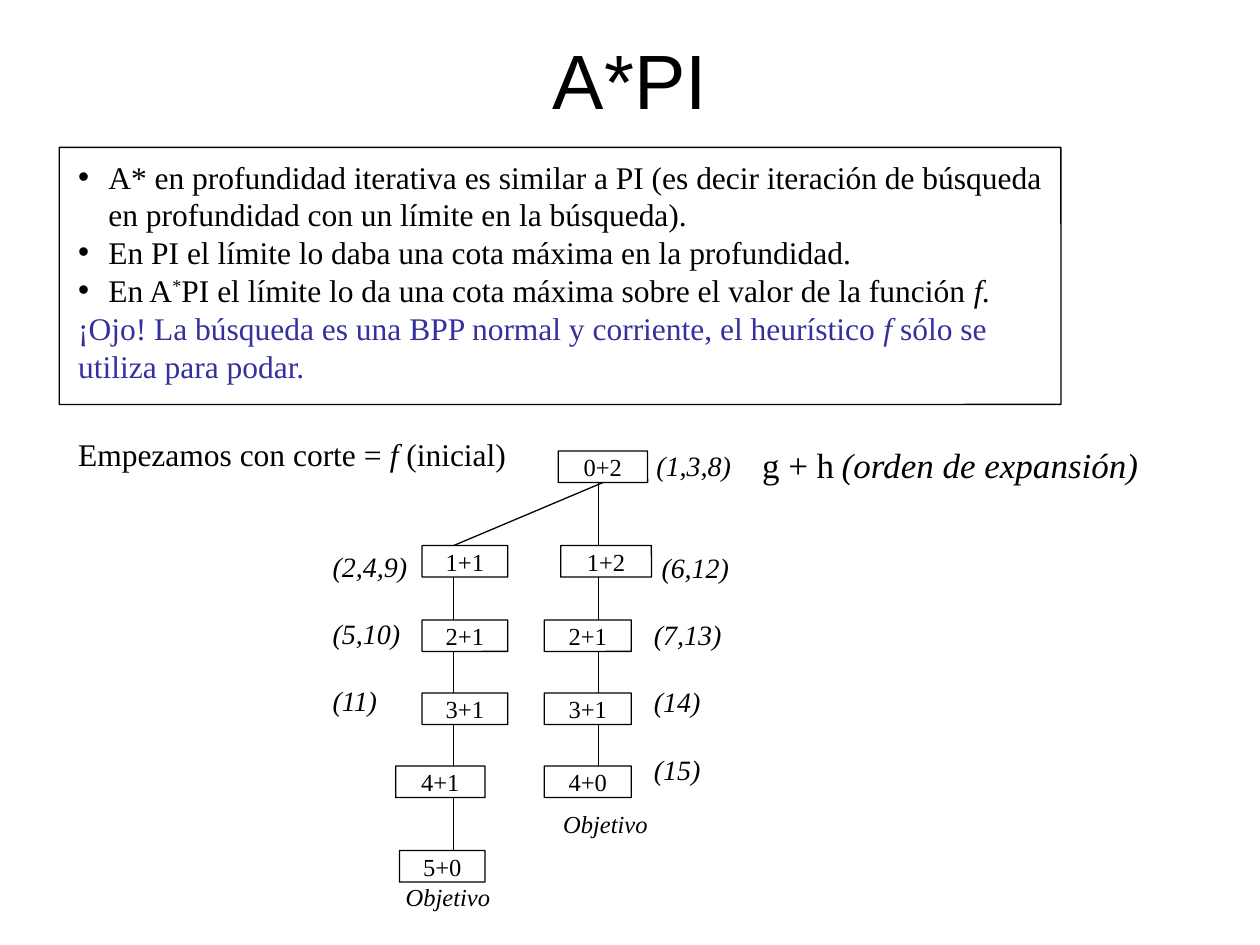
from lxml.etree import SubElement
from pptx import Presentation
from pptx.dml.color import RGBColor
from pptx.enum.shapes import MSO_CONNECTOR, MSO_SHAPE
from pptx.enum.text import MSO_ANCHOR, MSO_AUTO_SIZE, PP_ALIGN
from pptx.oxml.ns import qn
from pptx.util import Inches, Pt

BLACK = RGBColor(0x00, 0x00, 0x00)
INDIGO = RGBColor(0x34, 0x30, 0x9D)
SERIF = "Times New Roman"
NODE_HEIGHT = 0.25
LEFT_LINE, RIGHT_LINE = 3.6, 4.75


def write(shape, paragraphs, size, font=SERIF, align=PP_ALIGN.LEFT, anchor=MSO_ANCHOR.TOP,
          indent=0.04, wrap=True, italic=False, gap=0):
    frame = shape.text_frame
    settings = {"word_wrap": wrap, "auto_size": MSO_AUTO_SIZE.NONE, "vertical_anchor": anchor,
                "margin_left": 0, "margin_top": 0, "margin_right": Inches(0.04), "margin_bottom": 0}
    for name, value in settings.items():
        setattr(frame, name, value)
    for index, spans in enumerate(paragraphs):
        para = frame.paragraphs[0] if index == 0 else frame.add_paragraph()
        layout = {"alignment": align, "line_spacing": Pt(size * 1.2),
                  "space_before": Pt(gap if index else 0), "space_after": Pt(0)}
        for name, value in layout.items():
            setattr(para, name, value)
        properties = para._p.get_or_add_pPr()
        properties.set("marL", str(Inches(indent)))
        properties.set("indent", "0")
        for text, changes in spans:
            span = para.add_run()
            span.text = text
            style = {"name": font, "size": Pt(size), "italic": italic, "bold": False}
            for name, value in (style | changes).items():
                if name != "color":
                    setattr(span.font, name, value)
            span.font.color.rgb = changes.get("color", BLACK)


def outline(left, top, width, height, corner):
    shape = page.shapes.add_shape(MSO_SHAPE.ROUNDED_RECTANGLE, Inches(left), Inches(top),
                                  Inches(width), Inches(height))
    shape.adjustments[0] = corner
    shape.shadow.inherit = False
    shape.fill.background()
    shape.line.color.rgb = BLACK
    shape.line.width = Pt(0.75)
    return shape


deck = Presentation()
deck.slide_width, deck.slide_height = Inches(10), Inches(7.5)
page = deck.slides.add_slide(deck.slide_layouts[1])

title, body = page.placeholders
for holder, bounds in ((title, (0.75, 0, 8.5, 1.25)), (body, (0.62, 1.25, 7.81, 2.52))):
    for name, value in zip(("left", "top", "width", "height"), bounds):
        setattr(holder, name, Inches(value))

write(title, [[("A*PI", {})]], 44, font="Arial", align=PP_ALIGN.CENTER, anchor=MSO_ANCHOR.MIDDLE)

ITALIC = {"italic": True}
write(body, [
    [("A* en profundidad iterativa es similar a PI (es decir iteración de búsqueda "
      "en profundidad con un límite en la búsqueda).", {})],
    [("En PI el límite lo daba una cota máxima en la profundidad.", {})],
    [("En A", {}), ("*", {}), ("PI el límite lo da una cota máxima sobre el valor de la función ", {}),
     ("f.", ITALIC)],
    [("¡Ojo! La búsqueda es una BPP normal y corriente, el heurístico ", {"color": INDIGO}),
     ("f", {"italic": True, "color": INDIGO}),
     (" sólo se utiliza para podar.", {"color": INDIGO})],
    [("Empezamos con corte = ", {}), ("f ", ITALIC), ("(inicial)", {})],
], 18, indent=0)
paragraphs = body.text_frame.paragraphs
paragraphs[2].runs[1]._r.get_or_add_rPr().set("baseline", "30000")
paragraphs[4].space_before = Pt(28.8)
for index, para in enumerate(paragraphs):
    properties = para._p.get_or_add_pPr()
    if index < 3:
        properties.set("marL", str(Inches(0.24)))
        properties.set("indent", str(-Inches(0.24)))
        SubElement(properties, qn("a:buChar")).set("char", "•")
    else:
        SubElement(properties, qn("a:buNone"))

outline(0.47, 1.17, 7.95, 2.04, 0.001)

nodes = [
    ("0+2", 4.43, 3.58, 0.71),
    ("1+2", 4.45, 4.33, 0.72),
    ("2+1", 4.32, 4.92, 0.69),
    ("3+1", 4.32, 5.5, 0.69),
    ("4+0", 4.32, 6.08, 0.69),
    ("1+1", 3.35, 4.33, 0.68),
    ("2+1", 3.35, 4.92, 0.68),
    ("3+1", 3.35, 5.5, 0.68),
    ("4+1", 3.14, 6.08, 0.71),
    ("5+0", 3.17, 6.75, 0.68),
]
boxes = []
for text, left, top, width in nodes:
    box = outline(left, top, width, NODE_HEIGHT, 0.007)
    write(box, [[(text, {})]], 14, align=PP_ALIGN.CENTER, anchor=MSO_ANCHOR.MIDDLE)
    boxes.append(box)
root = boxes[0]

edges = [(4.78, 3.83, LEFT_LINE, 4.33)]
for x, branch in ((RIGHT_LINE, nodes[:5]), (LEFT_LINE, nodes[5:])):
    for upper, lower in zip(branch, branch[1:]):
        edges.append((x, upper[2] + NODE_HEIGHT, x, lower[2]))
for index, edge in enumerate(edges):
    line = page.shapes.add_connector(MSO_CONNECTOR.STRAIGHT, *map(Inches, edge))
    line.line.color.rgb = BLACK
    line.line.width = Pt(0.75)
    SubElement(line._element.spPr, qn("a:effectLst"))
    if index == 0:
        line.begin_connect(root, 2)

labels = [
    (["Objetivo"], 3.18, 7, 0.81, 0.24, 14),
    (["Objetivo"], 4.43, 6.42, 0.81, 0.24, 14),
    (["(orden de expansión)"], 6.64, 3.52, 2.46, 0.34, 20),
    (["(1,3,8)"], 5.17, 3.56, 0.68, 0.27, 16),
    (["(2,4,9)", "(5,10)", "(11)"], 2.6, 4.36, 0.68, 1.35, 16),
    (["(6,12)", "(7,13)", "(14)", "(15)"], 5.15, 4.37, 0.68, 1.88, 16),
]
for lines, left, top, width, height, size in labels:
    label = page.shapes.add_textbox(Inches(left), Inches(top), Inches(width), Inches(height))
    write(label, [[(text, {})] for text in lines], size, wrap=False, italic=True, gap=size * 1.2)
label.text_frame.paragraphs[0]._p.get_or_add_pPr().set("marL", str(Inches(0.1)))

legend = page.shapes.add_textbox(Inches(5.86), Inches(3.52), Inches(0.81), Inches(0.34))
write(legend, [[("g + h", {})]], 20, align=PP_ALIGN.CENTER, anchor=MSO_ANCHOR.MIDDLE, indent=0.18)

deck.save("out.pptx")
